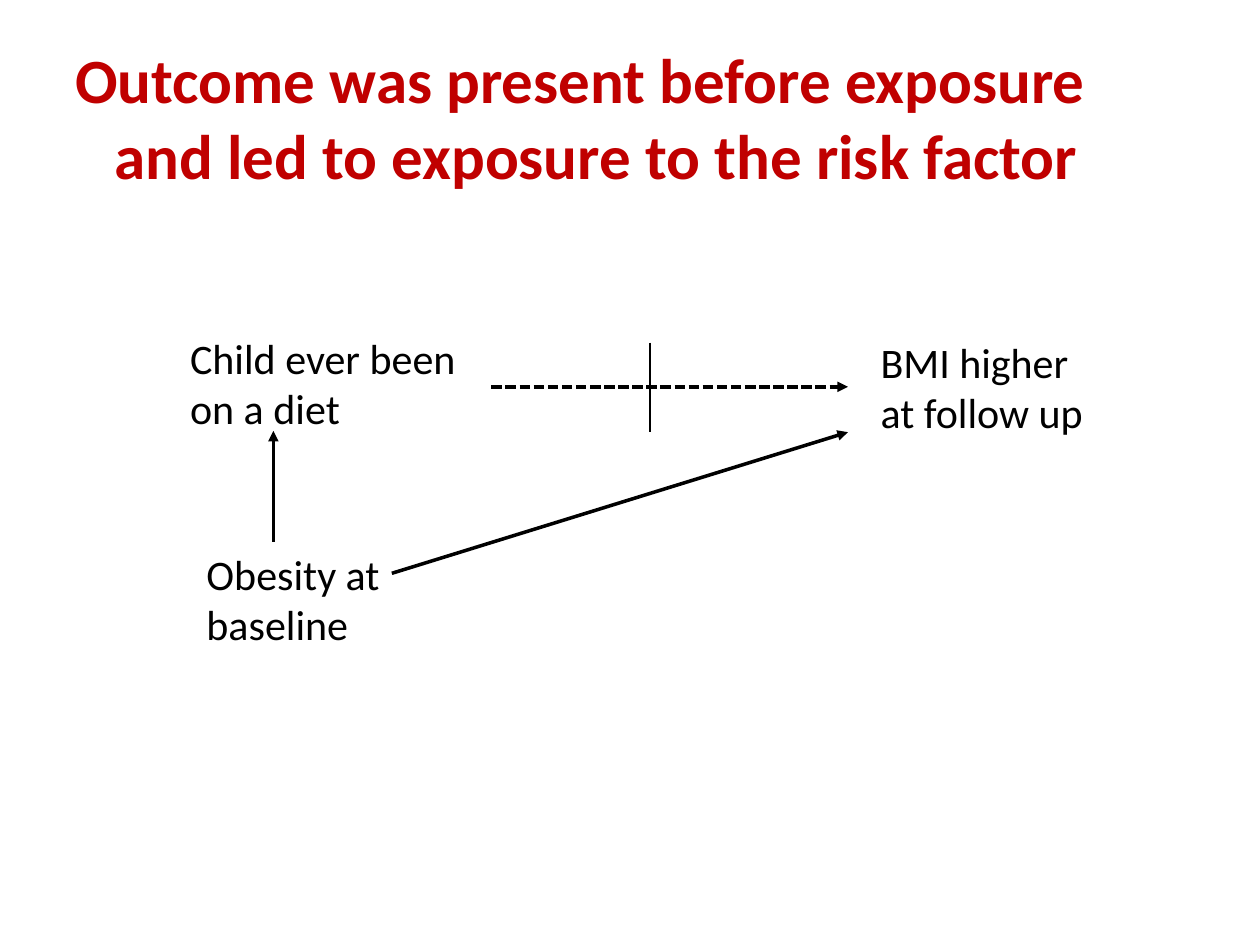
from dataclasses import dataclass
from typing import Optional

from lxml.etree import SubElement
from pptx import Presentation
from pptx.dml.color import RGBColor
from pptx.enum.dml import MSO_LINE
from pptx.enum.shapes import MSO_CONNECTOR
from pptx.enum.text import MSO_ANCHOR
from pptx.oxml.ns import qn
from pptx.slide import Slide
from pptx.util import Inches, Pt

BLACK = "000000"
RED = "C00000"


@dataclass
class Label:
    text: str
    left: float
    top: float
    width: float
    height: float = 0.91
    size: int = 24
    color: str = BLACK
    bold: bool = False
    anchor: MSO_ANCHOR = MSO_ANCHOR.TOP
    hanging: float = 0


@dataclass
class Line:
    start: tuple[float, float]
    end: tuple[float, float]
    width: float = 2
    dash: Optional[MSO_LINE] = None
    arrow: bool = True


LABELS = [
    Label("Outcome was present before exposure and led to exposure to the risk factor",
          0.5, 0.3, 9, 1.25, size=36, color=RED, bold=True,
          anchor=MSO_ANCHOR.MIDDLE, hanging=0.31),
    Label("Child ever been on a diet", 1.41, 2.59, 2.68),
    Label("BMI higher at follow up", 6.89, 2.62, 1.89),
    Label("Obesity at baseline", 1.54, 4.3, 1.89),
]

LINES = [
    Line((2.17, 4.3), (2.17, 3.42)),
    Line((3.9, 3.07), (6.73, 3.07), dash=MSO_LINE.SQUARE_DOT),
    Line((5.16, 2.72), (5.16, 3.43), width=0.75, arrow=False),
    Line((3.11, 4.55), (6.73, 3.43)),
]


def rgb(color: str) -> RGBColor:
    return RGBColor.from_string(color)


def add_label(page: Slide, label: Label) -> None:
    box = page.shapes.add_textbox(Inches(label.left), Inches(label.top),
                                  Inches(label.width), Inches(label.height))
    frame = box.text_frame
    frame.word_wrap = True
    frame.vertical_anchor = label.anchor
    para = frame.paragraphs[0]
    if label.hanging:
        indent = Inches(label.hanging)
        properties = para._p.get_or_add_pPr()
        properties.set("marL", str(indent))
        properties.set("indent", str(-indent))
    span = para.add_run()
    span.text = label.text
    formats = {"name": "Calibri", "size": Pt(label.size), "bold": label.bold}
    for name, value in formats.items():
        setattr(span.font, name, value)
    span.font.color.rgb = rgb(label.color)


def add_line(page: Slide, line: Line) -> None:
    connector = page.shapes.add_connector(
        MSO_CONNECTOR.STRAIGHT, *map(Inches, line.start + line.end))
    connector.line.color.rgb = rgb(BLACK)
    connector.line.width = Pt(line.width)
    if line.dash:
        connector.line.dash_style = line.dash
    if line.arrow:
        SubElement(connector.line._get_or_add_ln(), qn("a:tailEnd"), type="triangle")
    SubElement(connector._element.spPr, qn("a:effectLst"))


def main() -> None:
    deck = Presentation()
    deck.slide_width, deck.slide_height = Inches(10), Inches(7.5)
    page = deck.slides.add_slide(deck.slide_layouts[6])
    for label in LABELS:
        add_label(page, label)
    for line in LINES:
        add_line(page, line)
    deck.save("out.pptx")


if __name__ == "__main__":
    main()
